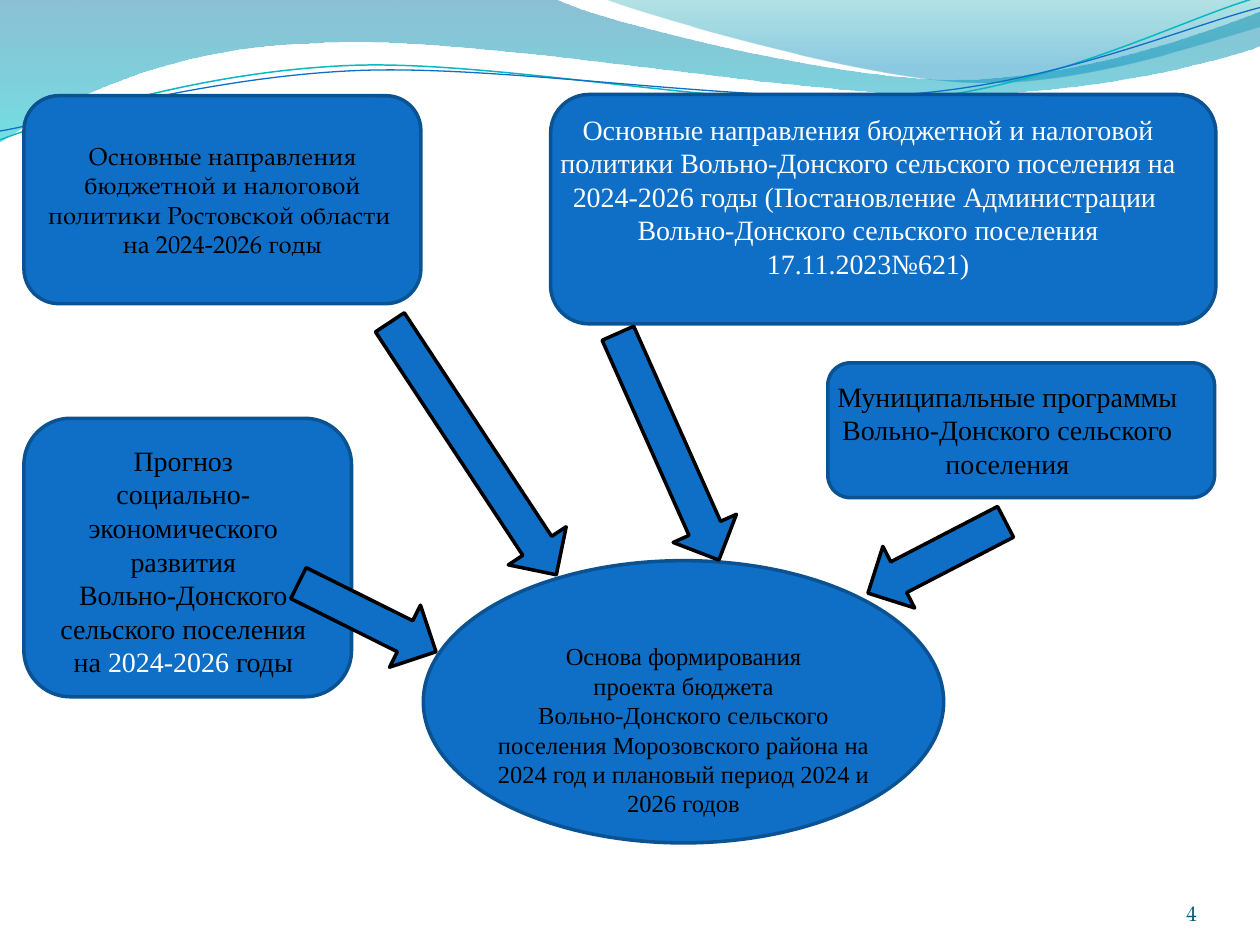
"""Build the slide on the sources of the village budget draft."""
from math import cos, radians, sin
from lxml.etree import SubElement
from pptx import Presentation
from pptx.dml.color import RGBColor
from pptx.enum.shapes import MSO_SHAPE
from pptx.enum.text import MSO_ANCHOR, PP_ALIGN
from pptx.oxml.ns import qn
from pptx.util import Pt

PX = 9144
SIZE = (1000, 750)
THEME = {
    "fill": "0F6FC6", "edge": "0B5292", "dark": "000000", "light": "FFFFFF",
    "page": "045D75", "teal": "0AB8BF",
    "head": "TeX Gyre Pagella", "body": "Times New Roman",
    "large": 16, "mid": 14, "small": 12, "rule": 2,
}

BANDS = [
    ((0, 0), [(440, -1), (476, 17, 664, 63, 758, 63), (853, 63, 958, 26, 1000, 9),
              (1001, 36), (983, 44, 870, 76, 746, 75), (622, 75, 382, 28, 257, 34),
              (129, 36, 46, 83, -1, 113), (0, 0)],
     [(0, "0074A1", 45), (1, "00C6CF", 55)]),
    ((479, -1), [(509, 11, 682, 62, 769, 65), (856, 69, 961, 32, 1000, 21),
                 (1000, 0), (479, -1)],
     [(0, "00A1A9", 30), (0.8, "008BBF", 45)]),
]
TILT = 357.3
WAVES = [
    ((0, 111), [(48, 93, 158, 57, 277, 52), (395, 47, 593, 89, 713, 80),
                (833, 71, 938, 15, 998, -2)], (499, 57), "teal", 0.85),
    ((0, 104), [(47, 96, 164, 61, 283, 56), (403, 51, 597, 84, 717, 75),
                (836, 67, 941, 21, 1000, 6)], (499, 59), "fill", 0.75),
]
PANELS = [
    ("OVAL", (336, 445, 413, 224)),
    ("ROUNDED_RECTANGLE", (19, 76, 315, 165)),
    ("ROUNDED_RECTANGLE", (19, 332, 260, 221)),
    ("ROUNDED_RECTANGLE", (657, 288, 307, 107)),
    ("ROUNDED_RECTANGLE", (437, 75, 528, 182)),
]
REGION = [
    [("Основные направления бюджетной и налоговой политики Ростовской области ", "dark")],
    [("на 2024-2026 годы", "dark")],
]
TEXTS = [
    ((634, 296, 331, 91), "large", [
        [("Муниципальные программы Вольно-Донского сельского поселения", "dark")]]),
    ((27, 347, 237, 199), "large", [
        [("Прогноз", "dark")], [("социально-", "dark")],
        [("экономического", "dark")], [("развития", "dark")],
        [("Вольно-Донского сельского поселения на ", "dark"),
         ("2024-2026 ", "light"), ("годы", "dark")]]),
    ((384, 504, 317, 152), "mid", [
        [("Основа формирования", "dark")], [("проекта бюджета", "dark")],
        [("Вольно-Донского сельского поселения Морозовского района на "
          "2024 год и плановый период 2024 и 2026 годов", "dark")]]),
    ((429, 84, 520, 145), "large", [
        [("Основные направления бюджетной и налоговой политики Вольно-Донского "
          "сельского поселения на 2024-2026 годы (Постановление Администрации  "
          "Вольно-Донского сельского поселения 17.11.2023№621)", "light")]]),
]
ARROWS = [
    ((716, 381, 55, 123), 62.6), ((348, 236, 55, 240), 326.6),
    ((264, 429, 55, 122), 296.5), ((503, 256, 55, 197), 336),
]
PAGE = ((867, 695, 83, 40), "4")


def emu(box):
    return [round(v * PX) for v in box]


def tint(name):
    return RGBColor.from_string(THEME.get(name, name))


def put(item, form):
    for key, val in form.items():
        setattr(item, key, val)


def spin(pair, mid, turn):
    angle = radians(turn)
    x, y = (p - m for p, m in zip(pair, mid))
    return (mid[0] + x * cos(angle) - y * sin(angle),
            mid[1] + x * sin(angle) + y * cos(angle))


def draw(slide, start, steps, close, mid=(0, 0), turn=0):
    def place(pair):
        return emu(spin(pair, mid, -turn))

    pen = slide.shapes.build_freeform(*place(start), scale=1.0)
    pen.add_line_segments([place(step[-2:]) for step in steps], close=close)
    shape = pen.convert_to_shape()
    nodes = list(shape._element.iter(qn("a:lnTo")))
    for node, step in zip(nodes, steps):
        if len(step) == 2:
            continue
        node.tag = qn("a:cubicBezTo")
        node.remove(node[0])
        for i in (0, 2, 4):
            x, y = place(step[i:i + 2])
            dot = SubElement(node, qn("a:pt"))
            dot.set("x", str(x - shape.left))
            dot.set("y", str(y - shape.top))
    put(shape, {"rotation": turn})
    shape.shadow.inherit = False
    return shape


def band(slide, start, steps, stops):
    shape = draw(slide, start, steps, True)
    shape.line.fill.background()
    shape.fill.gradient()
    shape.fill.gradient_angle = 270
    for stop, (pos, color, alpha) in zip(shape.fill.gradient_stops, stops):
        stop.position = pos
        stop.color.rgb = tint(color)
    for node, (_, _, alpha) in zip(shape._element.iter(qn("a:srgbClr")), stops):
        SubElement(node, qn("a:alpha")).set("val", str(alpha * 1000))


def outline(shape, color, width):
    shape.line.color.rgb = tint(color)
    shape.line.width = Pt(width)


def solid(slide, kind, box, edge, turn=0):
    shape = slide.shapes.add_shape(getattr(MSO_SHAPE, kind), *emu(box))
    shape.shadow.inherit = False
    shape.rotation = turn
    shape.fill.solid()
    shape.fill.fore_color.rgb = tint("fill")
    outline(shape, edge, THEME["rule"])
    return shape


def write(shape, paras, font, size, align=PP_ALIGN.CENTER, **form):
    frame = shape.text_frame
    put(frame, {"word_wrap": True, **form})
    for i, runs in enumerate(paras):
        para = frame.paragraphs[0] if i == 0 else frame.add_paragraph()
        para.alignment = align
        for text, color in runs:
            run = para.add_run()
            run.text = text
            put(run.font, {"name": THEME[font], "size": Pt(THEME[size])})
            run.font.color.rgb = tint(color)


def main():
    deck = Presentation()
    put(deck, dict(zip(("slide_width", "slide_height"), emu(SIZE))))
    slide = deck.slides.add_slide(deck.slide_layouts[6])
    for start, steps, stops in BANDS:
        band(slide, start, steps, stops)
    for start, steps, mid, color, width in WAVES:
        wave = draw(slide, start, steps, False, mid, TILT)
        wave.fill.background()
        outline(wave, color, width)
    panels = [solid(slide, kind, box, "edge") for kind, box in PANELS[:4]]
    write(panels[1], REGION, "head", "mid", vertical_anchor=MSO_ANCHOR.MIDDLE)
    for box, size, paras in TEXTS[:3]:
        write(slide.shapes.add_textbox(*emu(box)), paras, "body", size)
    solid(slide, *PANELS[4], "edge")
    box, size, paras = TEXTS[3]
    write(slide.shapes.add_textbox(*emu(box)), paras, "body", size)
    for box, turn in ARROWS:
        solid(slide, "DOWN_ARROW", box, "dark", turn)
    box, text = PAGE
    sides = ("left", "top", "right", "bottom")
    write(slide.shapes.add_textbox(*emu(box)), [[(text, "page")]], "head", "small",
          PP_ALIGN.RIGHT, vertical_anchor=MSO_ANCHOR.BOTTOM,
          **{f"margin_{side}": 0 for side in sides})
    deck.save("out.pptx")


if __name__ == "__main__":
    main()
